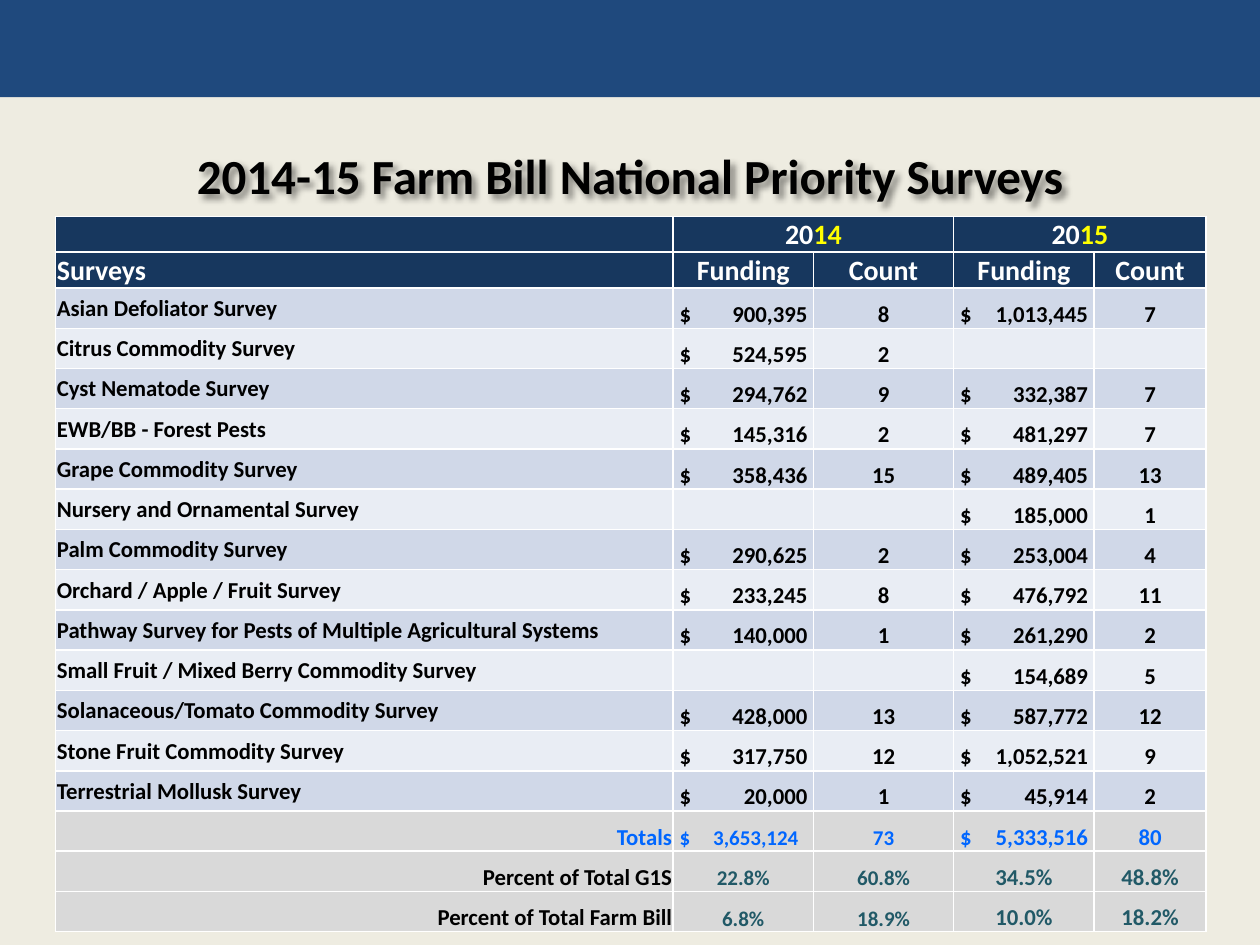
"""Build the slide of Farm Bill survey funding and counts."""
from dataclasses import dataclass

from lxml import etree
from pptx import Presentation
from pptx.dml.color import RGBColor
from pptx.enum.shapes import MSO_SHAPE
from pptx.enum.text import MSO_ANCHOR, PP_ALIGN
from pptx.oxml import parse_xml
from pptx.oxml.ns import qn
from pptx.util import Pt

LEFT, CENTER, RIGHT = PP_ALIGN.LEFT, PP_ALIGN.CENTER, PP_ALIGN.RIGHT
MIDDLE, BOTTOM = MSO_ANCHOR.MIDDLE, MSO_ANCHOR.BOTTOM
RECTANGLE = MSO_SHAPE.RECTANGLE

FONT = "Calibri"
BLACK, WHITE, YELLOW = "000000", "FFFFFF", "FFFF00"
NAVY, BAND, CREAM = "17375E", "1F497D", "EEECE1"
STRIPES = ("D0D8E8", "E9EDF4")
GRAY, BLUE, TEAL = "D9D9D9", "0066FF", "215967"
COL_WIDTHS = (352.8, 80.2, 80.2, 80.2, 64)
HEADER_HEIGHT, ROW_HEIGHT = 20.5, 23
AMOUNT_TABS = {12: 68, 13: 73}
DRAWING_NS = "http://schemas.openxmlformats.org/drawingml/2006/main"
SHADOW = (
    f'<a:effectLst xmlns:a="{DRAWING_NS}">'
    '<a:outerShdw blurRad="50800" dist="38100" dir="2700000" algn="tl">'
    '<a:srgbClr val="000000"><a:alpha val="45000"/></a:srgbClr>'
    "</a:outerShdw></a:effectLst>"
)


@dataclass
class Survey:
    """Funding and count of one survey in both years."""

    name: str
    funding_2014: str
    count_2014: str
    funding_2015: str
    count_2015: str

    def values(self) -> tuple[str, ...]:
        """Return the four values in column order."""
        return self.funding_2014, self.count_2014, self.funding_2015, self.count_2015


@dataclass
class Style:
    """Look of one table cell."""

    fill: str
    color: str = BLACK
    size: int = 13
    align: PP_ALIGN = CENTER
    anchor: MSO_ANCHOR = BOTTOM


SURVEYS = (
    Survey("Asian Defoliator Survey", "900,395", "8", "1,013,445", "7"),
    Survey("Citrus Commodity Survey", "524,595", "2", "", ""),
    Survey("Cyst Nematode Survey", "294,762", "9", "332,387", "7"),
    Survey("EWB/BB - Forest Pests", "145,316", "2", "481,297", "7"),
    Survey("Grape Commodity Survey", "358,436", "15", "489,405", "13"),
    Survey("Nursery and Ornamental Survey", "", "", "185,000", "1"),
    Survey("Palm Commodity Survey", "290,625", "2", "253,004", "4"),
    Survey("Orchard / Apple / Fruit Survey", "233,245", "8", "476,792", "11"),
    Survey("Pathway Survey for Pests of Multiple Agricultural Systems",
           "140,000", "1", "261,290", "2"),
    Survey("Small Fruit / Mixed Berry Commodity Survey", "", "", "154,689", "5"),
    Survey("Solanaceous/Tomato Commodity Survey", "428,000", "13", "587,772", "12"),
    Survey("Stone Fruit Commodity Survey", "317,750", "12", "1,052,521", "9"),
    Survey("Terrestrial Mollusk Survey", "20,000", "1", "45,914", "2"),
)
TOTALS = Survey("Totals", "3,653,124", "73", "5,333,516", "80")
PERCENTS = (
    Survey("Percent of Total G1S", "22.8%", "60.8%", "34.5%", "48.8%"),
    Survey("Percent of Total Farm Bill", "6.8%", "18.9%", "10.0%", "18.2%"),
)


def rgb(value: str) -> RGBColor:
    """Turn a hex string into a colour."""
    return RGBColor.from_string(value)


def add_run(p, text: str, size: int, color: str) -> None:
    """Add one bold run to a paragraph."""
    r = p.add_run()
    r.text = text
    r.font.name = FONT
    r.font.size = Pt(size)
    r.font.bold = True
    r.font.color.rgb = rgb(color)


def add_borders(cell) -> None:
    """Draw thin white lines on all four sides of a cell."""
    tc_pr = cell._tc.get_or_add_tcPr()
    for i, side in enumerate(("lnL", "lnR", "lnT", "lnB")):
        ln = etree.Element(qn(f"a:{side}"), w=str(Pt(1)))
        fill = etree.SubElement(ln, qn("a:solidFill"))
        etree.SubElement(fill, qn("a:srgbClr"), val=WHITE)
        tc_pr.insert(i, ln)


def style_cell(cell, style: Style):
    """Format a cell and return its paragraph."""
    cell.fill.solid()
    cell.fill.fore_color.rgb = rgb(style.fill)
    cell.margin_left = cell.margin_right = cell.margin_top = Pt(0.72)
    cell.margin_bottom = Pt(0)
    cell.vertical_anchor = style.anchor
    add_borders(cell)
    p = cell.text_frame.paragraphs[0]
    p.alignment = style.align
    return p


def write_cell(cell, text: str, style: Style) -> None:
    """Format a cell and write its text."""
    p = style_cell(cell, style)
    if text:
        add_run(p, text, style.size, style.color)
    else:
        p._p.get_or_add_endParaRPr().set("sz", str(style.size * 100))


def write_amount(cell, amount: str, style: Style) -> None:
    """Write a dollar sign at the left and its amount at a right tab."""
    if not amount:
        write_cell(cell, amount, style)
        return
    p = style_cell(cell, style)
    p.alignment = LEFT
    cell.margin_left = Pt(3.7)
    tabs = etree.SubElement(p._p.get_or_add_pPr(), qn("a:tabLst"))
    etree.SubElement(tabs, qn("a:tab"), pos=str(Pt(AMOUNT_TABS[style.size])), algn="r")
    add_run(p, f"$\t{amount}", style.size, style.color)


def write_header(table) -> None:
    """Write the year row and the column heading row."""
    heading = Style(NAVY, WHITE, 16, CENTER, MIDDLE)
    write_cell(table.cell(0, 0), "", heading)
    for col, year in ((1, "14"), (3, "15")):
        cell = table.cell(0, col)
        write_cell(cell, "20", heading)
        add_run(cell.text_frame.paragraphs[0], year, heading.size, YELLOW)
        write_cell(table.cell(0, col + 1), "", heading)
        cell.merge(table.cell(0, col + 1))
    write_cell(table.cell(1, 0), "Surveys", Style(NAVY, WHITE, 16, LEFT, MIDDLE))
    for col, text in enumerate(("Funding", "Count") * 2, 1):
        write_cell(table.cell(1, col), text, heading)


def write_body(table) -> None:
    """Write the survey rows and the summary rows."""
    for i, survey in enumerate(SURVEYS):
        fill = STRIPES[i % 2]
        write_cell(table.cell(i + 2, 0), survey.name, Style(fill, align=LEFT, anchor=MIDDLE))
        for col, value in enumerate(survey.values(), 1):
            write = write_amount if col % 2 else write_cell
            write(table.cell(i + 2, col), value, Style(fill))
    for row, summary in enumerate((TOTALS, *PERCENTS), len(SURVEYS) + 2):
        is_total = summary is TOTALS
        label = Style(GRAY, BLUE if is_total else BLACK, align=RIGHT)
        write_cell(table.cell(row, 0), summary.name, label)
        for col, value in enumerate(summary.values(), 1):
            style = Style(GRAY, BLUE if is_total else TEAL, 12 if col < 3 else 13)
            write = write_amount if is_total and col % 2 else write_cell
            write(table.cell(row, col), value, style)


def add_title(s) -> None:
    """Add the centred title with a soft shadow."""
    sp = s.shapes.add_textbox(Pt(36), Pt(72), Pt(648), Pt(56))
    sp._element.spPr.append(parse_xml(SHADOW))
    tf = sp.text_frame
    tf.word_wrap = True
    tf.vertical_anchor = MIDDLE
    p = tf.paragraphs[0]
    p.alignment = CENTER
    add_run(p, "2014-15 Farm Bill National Priority Surveys", 28, BLACK)


def main() -> None:
    """Build and save the presentation."""
    prs = Presentation()
    prs.slide_width, prs.slide_height = Pt(720), Pt(540)
    s = prs.slides.add_slide(prs.slide_layouts[6])
    s.background.fill.solid()
    s.background.fill.fore_color.rgb = rgb(CREAM)
    band = s.shapes.add_shape(RECTANGLE, Pt(0), Pt(0), Pt(720), Pt(55.5))
    band.shadow.inherit = False
    band.fill.solid()
    band.fill.fore_color.rgb = rgb(BAND)
    band.line.fill.background()
    add_title(s)
    heights = [HEADER_HEIGHT] * 2 + [ROW_HEIGHT] * (len(SURVEYS) + 1 + len(PERCENTS))
    table = s.shapes.add_table(len(heights), len(COL_WIDTHS), Pt(31.8), Pt(123.6),
                               Pt(sum(COL_WIDTHS)), Pt(sum(heights))).table
    for column, width in zip(table.columns, COL_WIDTHS):
        column.width = Pt(width)
    for row, height in zip(table.rows, heights):
        row.height = Pt(height)
    write_header(table)
    write_body(table)
    prs.save("out.pptx")


if __name__ == "__main__":
    main()
